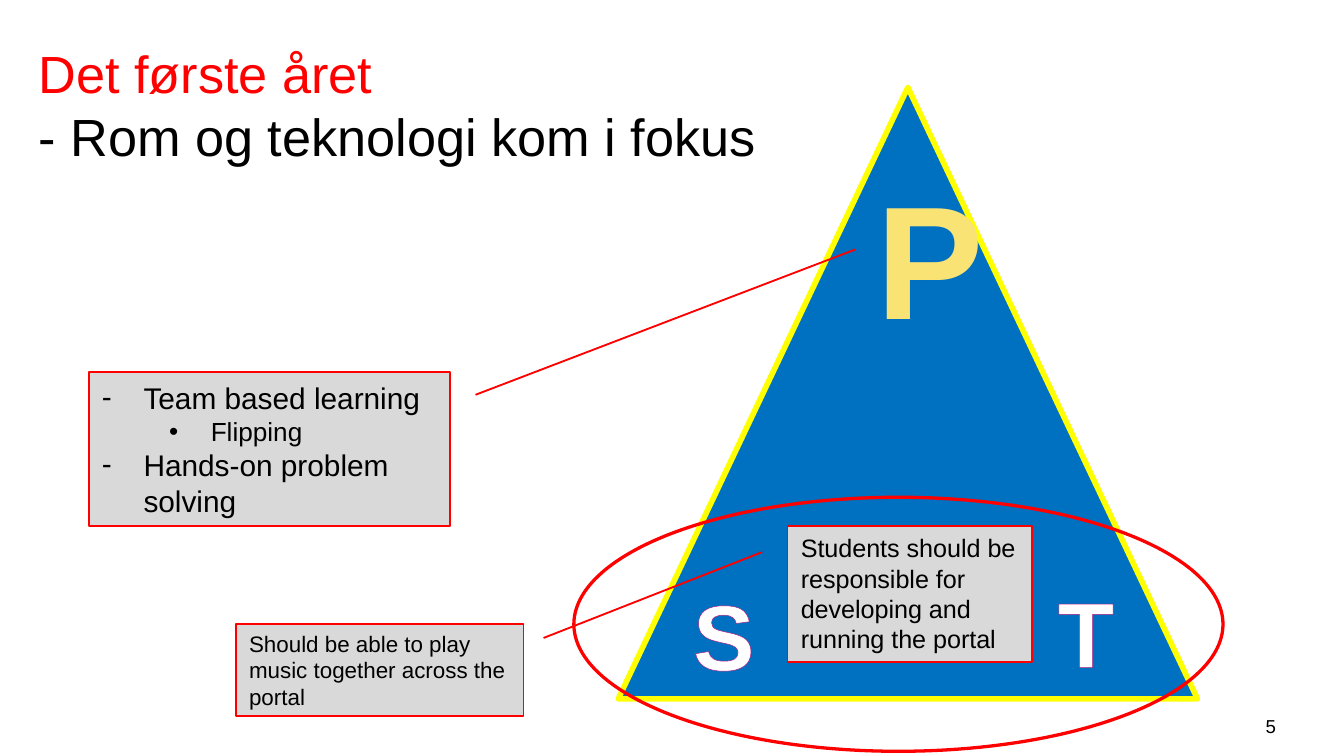
from lxml.etree import SubElement
from pptx import Presentation
from pptx.dml.color import RGBColor
from pptx.enum.shapes import MSO_SHAPE as SHAPE
from pptx.enum.text import MSO_ANCHOR as ANCHOR, MSO_AUTO_SIZE as AUTO, PP_ALIGN as ALIGN
from pptx.oxml.ns import qn
from pptx.util import Inches, Pt

COLS, ROWS = 100, 56.25
CELL = Inches(0.1)
COLORS = {
    "blue": "0070C0", "yellow": "FFFF00", "cream": "FAE375", "purple": "B01B81",
    "red": "FF0000", "grey": "D9D9D9", "black": "000000", "white": "FFFFFF",
}


def rgb(name):
    return RGBColor.from_string(COLORS[name])


def grid(*cells):
    return [round(c * CELL) for c in cells]


def style(sp, fill=None, line=None, width=1):
    sp.shadow.inherit = False
    if fill:
        sp.fill.solid()
        sp.fill.fore_color.rgb = rgb(fill)
    else:
        sp.fill.background()
    if line:
        sp.line.color.rgb = rgb(line)
        sp.line.width = Pt(width)
    else:
        sp.line.fill.background()
    return sp


def add_bullet(p, char, indent):
    pPr = p._p.get_or_add_pPr()
    pPr.set("marL", str(Inches(indent)))
    pPr.set("indent", str(-Inches(0.31)))
    SubElement(pPr, qn("a:buFont"), typeface="Arial")
    SubElement(pPr, qn("a:buChar"), char=char)


def outline_run(r, color):
    rPr = r._r.get_or_add_rPr()
    ln = SubElement(rPr, qn("a:ln"), w=str(Pt(1)))
    fill = SubElement(ln, qn("a:solidFill"))
    SubElement(fill, qn("a:srgbClr"), val=COLORS[color])
    rPr.insert(0, ln)


def add_run(p, text, size=12, color="black", bold=False, outline=None):
    r = p.add_run()
    r.text = text
    r.font.name = "Arial"
    r.font.size = Pt(size)
    r.font.bold = bold
    r.font.color.rgb = rgb(color)
    if outline:
        outline_run(r, outline)


def write(sp, paragraphs, align=ALIGN.LEFT, anchor=ANCHOR.TOP, grow=False, wrap=True,
          margins=(0.1, 0.05), **font):
    tf = sp.text_frame
    tf.word_wrap = wrap
    tf.auto_size = AUTO.SHAPE_TO_FIT_TEXT if grow else AUTO.NONE
    tf.vertical_anchor = anchor
    tf.margin_left = tf.margin_right = Inches(margins[0])
    tf.margin_top = tf.margin_bottom = Inches(margins[1])
    for i, (text, extra) in enumerate(paragraphs):
        p = tf.add_paragraph() if i else tf.paragraphs[0]
        p.alignment = align
        options = {**font, **extra}
        p.level = options.pop("level", 0)
        bullet = options.pop("bullet", None)
        if bullet:
            add_bullet(p, bullet, 0.31 + 0.5 * p.level)
        add_run(p, text, **options)


def add_triangle(shapes, left, top, width, height):
    x, y, right, bottom = grid(left, top, left + width, top + height)
    fb = shapes.build_freeform(x, bottom)
    fb.add_line_segments([((x + right) // 2, y), (right, bottom)], close=True)
    style(fb.convert_to_shape(), "blue", "yellow", 3)


def add_letter(shapes, letter, at, size, color, fill=None, wrap=False):
    sp = style(shapes.add_shape(SHAPE.RECTANGLE, *grid(*at)), fill)
    write(sp, [(letter, {})], align=ALIGN.CENTER, grow=True, wrap=wrap, margins=(0.07, 0.04),
          size=size, color=color, bold=True, outline="purple")


def add_callout(shapes, at, end, paragraphs, **font):
    sp = style(shapes.add_shape(SHAPE.LINE_CALLOUT_1, *grid(*at)), "grey", "red")
    for i, value in enumerate((0.15, 1.07, *end)):
        sp.adjustments[i] = value
    write(sp, paragraphs, anchor=ANCHOR.MIDDLE, **font)


def add_textbox(shapes, at, paragraphs, **options):
    write(shapes.add_textbox(*grid(*at)), paragraphs, **options)


def main():
    prs = Presentation()
    prs.slide_width, prs.slide_height = grid(COLS, ROWS)
    s = prs.slides.add_slide(prs.slide_layouts[6])
    shapes = s.shapes

    add_textbox(shapes, (92.7, 52.7, 3.7, 3), [("5", {})], align=ALIGN.CENTER, size=10)

    pyramid = shapes.add_group_shape().shapes
    add_triangle(pyramid, 46, 6.5, 43.1, 45.5)
    add_letter(pyramid, "P", (64.5, 11.4, 6.6, 15.3), 86.2, "cream", wrap=True)
    add_letter(pyramid, "T", (77.9, 42.4, 5.8, 9.1), 49.5, "white", "blue")
    add_letter(pyramid, "S", (50.8, 42.6, 6.1, 9.1), 49.5, "white", "blue")

    add_textbox(shapes, (1.9, 2.6, 69.2, 10.4),
                [("Det første året", {"color": "red"}), ("- Rom og teknologi kom i fokus", {})],
                grow=True, size=28)

    add_callout(shapes, (6.6, 27.65, 26.9, 11.5), (-0.79, 2.12), [
        ("Team based learning", {"bullet": "-"}),
        ("Flipping", {"bullet": "•", "level": 1, "size": 14}),
        ("Hands-on problem solving", {"bullet": "-"}),
    ], size=16)

    box = style(shapes.add_shape(SHAPE.RECTANGLE, *grid(58.6, 39.15, 18.2, 10.1)),
                "grey", "red", 0.75)
    write(box, [("Students should be responsible for developing and running the portal", {})],
          grow=True, size=13.5)

    style(shapes.add_shape(SHAPE.OVAL, *grid(42.7, 37, 48.3, 18.9)), line="red", width=1.75)

    add_callout(shapes, (17.55, 46.45, 21.4, 6.8), (-0.79, 1.83),
                [("Should be able to play music together across the portal", {})], size=12)

    prs.save("out.pptx")


if __name__ == "__main__":
    main()
